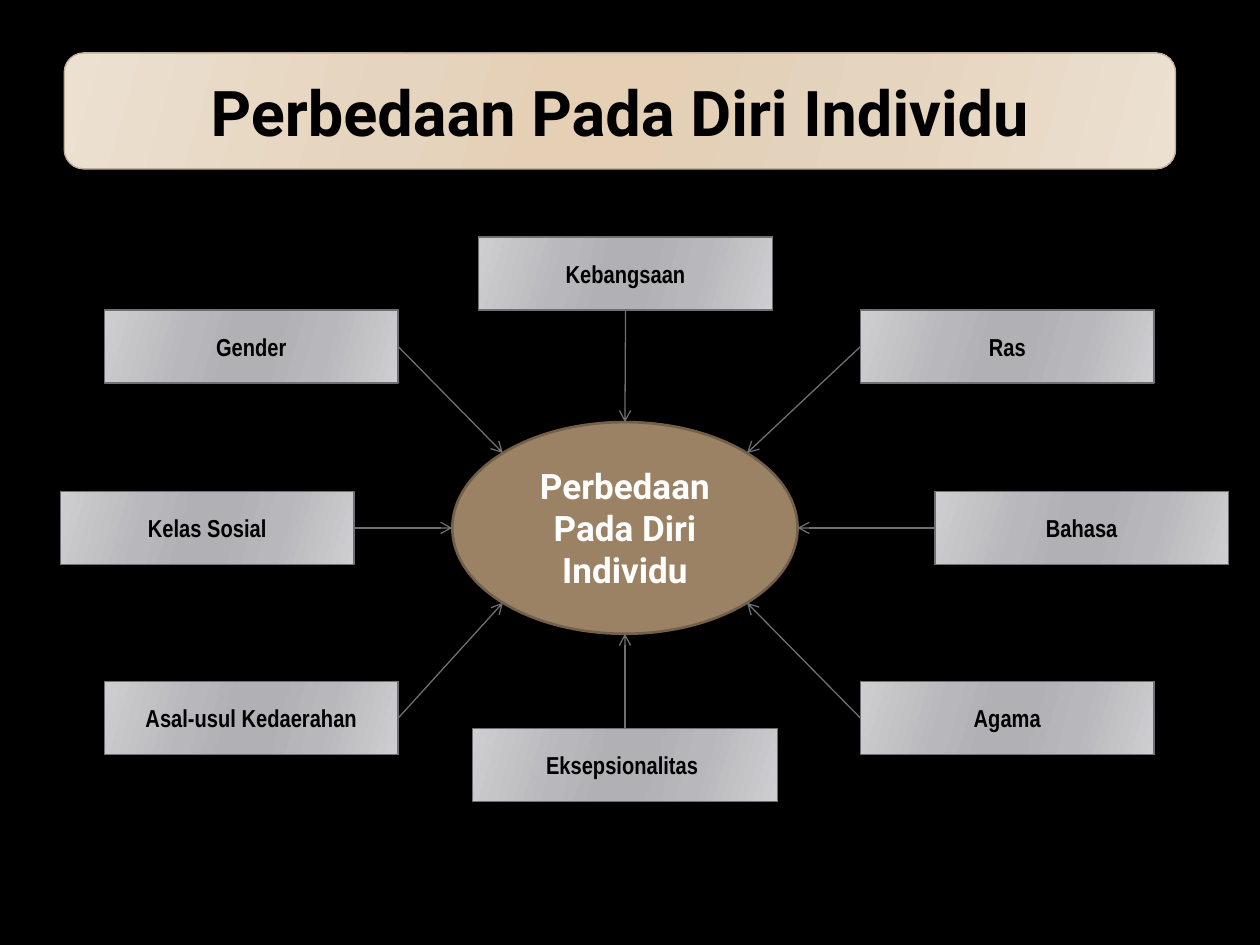
from math import cos, radians, sin

from lxml.etree import SubElement
from pptx import Presentation
from pptx.dml.color import RGBColor
from pptx.enum.shapes import MSO_CONNECTOR, MSO_SHAPE
from pptx.enum.text import MSO_ANCHOR, PP_ALIGN
from pptx.oxml.ns import qn
from pptx.util import Inches, Pt

BLACK = RGBColor(0x00, 0x00, 0x00)
WHITE = RGBColor(0xFF, 0xFF, 0xFF)
BROWN = RGBColor(0x9C, 0x82, 0x65)
DARK_BROWN = RGBColor(0x73, 0x60, 0x4B)
TAN = RGBColor(0xBE, 0xAE, 0x98)
GRAY = RGBColor(0x6F, 0x6F, 0x74)

# Gradient colours at each stop percentage
STOPS = (0, 30, 45, 55, 73, 100)
SILVER_GRADIENT = [RGBColor.from_string(c) for c in (
    "CECED0", "B8B8BC", "B1B1B5", "B1B1B5", "B8B8BC", "CECED0")]
SAND_GRADIENT = [RGBColor.from_string(c) for c in (
    "ECE0D1", "E5D4BE", "E5D0B5", "E3D0B7", "E5D4BE", "ECE0D1")]

TITLE_FONT = {"name": "Roboto", "size": Pt(36), "bold": True}
CENTER_FONT = {"name": "Roboto", "size": Pt(20), "bold": True}
FACTOR_FONT = {"name": "Arial Narrow", "size": Pt(14), "bold": True}

TOPIC = "Perbedaan Pada Diri Individu"
CENTER_X, CENTER_Y = 4.96, 4.19
RADIUS_X, RADIUS_Y = 1.37, 0.84
BOX_WIDTH, BOX_HEIGHT = 2.33, 0.58

# Label, left, top, width, arrow side (x, y), angle where the arrow meets the ellipse
FACTORS = [
    ("Ras", 6.83, 2.46, BOX_WIDTH, (0, 0.5), -45),
    ("Kebangsaan", 3.8, 1.88, BOX_WIDTH, (0.5, 1), -90),
    ("Bahasa", 7.42, 3.9, BOX_WIDTH, (0, 0.5), 0),
    ("Eksepsionalitas ", 3.75, 5.78, 2.42, (0.5, 0), 90),
    ("Gender", 0.83, 2.46, BOX_WIDTH, (1, 0.5), -135),
    ("Kelas Sosial", 0.48, 3.9, BOX_WIDTH, (1, 0.5), 180),
    ("Agama", 6.83, 5.41, BOX_WIDTH, (0, 0.5), 45),
    ("Asal-usul Kedaerahan", 0.83, 5.41, BOX_WIDTH, (1, 0.5), 135),
]


def add_label_shape(slide, kind, bounds, text, font_format, text_color, line_color, line_width):
    shape = slide.shapes.add_shape(kind, *map(Inches, bounds))
    shape.shadow.inherit = False
    shape.line.color.rgb = line_color
    shape.line.width = Pt(line_width)
    frame = shape.text_frame
    frame.word_wrap = True
    frame.vertical_anchor = MSO_ANCHOR.MIDDLE
    paragraph = frame.paragraphs[0]
    paragraph.alignment = PP_ALIGN.CENTER
    run = paragraph.add_run()
    run.text = text
    for attribute, value in font_format.items():
        setattr(run.font, attribute, value)
    run.font.color.rgb = text_color
    return shape


def fill_gradient(shape, colors):
    shape.fill.gradient()
    shape.fill.gradient_angle = 344
    stop_list = shape.element.spPr.find(".//" + qn("a:gsLst"))
    for stop in list(stop_list):
        stop_list.remove(stop)
    for position, color in zip(STOPS, colors):
        stop = SubElement(stop_list, qn("a:gs"), pos=str(position * 1000))
        SubElement(stop, qn("a:srgbClr"), val=str(color))


def add_shadow(shape):
    effects = shape.element.spPr.find(qn("a:effectLst"))
    shadow = SubElement(effects, qn("a:outerShdw"), blurRad=str(Pt(3)), dist=str(Pt(2)),
                        dir="5400000", rotWithShape="0")
    color = SubElement(shadow, qn("a:srgbClr"), val=str(BLACK))
    SubElement(color, qn("a:alpha"), val="40000")


def add_panel(slide, kind, bounds, text, font_format, gradient, line_color):
    panel = add_label_shape(slide, kind, bounds, text, font_format, BLACK, line_color, 0.75)
    fill_gradient(panel, gradient)
    add_shadow(panel)


def add_arrow(slide, start, end):
    arrow = slide.shapes.add_connector(MSO_CONNECTOR.STRAIGHT, *map(Inches, start + end))
    arrow.line.color.rgb = GRAY
    arrow.line.width = Pt(0.75)
    SubElement(arrow.line._get_or_add_ln(), qn("a:tailEnd"), type="arrow")
    SubElement(arrow._element.spPr, qn("a:effectLst"))


def main():
    presentation = Presentation()
    presentation.slide_width, presentation.slide_height = Inches(10), Inches(7.5)
    slide = presentation.slides.add_slide(presentation.slide_layouts[6])
    slide.background.fill.solid()
    slide.background.fill.fore_color.rgb = BLACK

    # Central topic
    center_bounds = (CENTER_X - RADIUS_X, CENTER_Y - RADIUS_Y, 2 * RADIUS_X, 2 * RADIUS_Y)
    center = add_label_shape(slide, MSO_SHAPE.OVAL, center_bounds, TOPIC,
                             CENTER_FONT, WHITE, DARK_BROWN, 1.5)
    center.fill.solid()
    center.fill.fore_color.rgb = BROWN

    # Surrounding factors
    for label, left, top, width, _, _ in FACTORS:
        add_panel(slide, MSO_SHAPE.RECTANGLE, (left, top, width, BOX_HEIGHT), label,
                  FACTOR_FONT, SILVER_GRADIENT, GRAY)

    # Title
    add_panel(slide, MSO_SHAPE.ROUNDED_RECTANGLE, (0.51, 0.42, 8.82, 0.92), TOPIC,
              TITLE_FONT, SAND_GRADIENT, TAN)

    # Arrows from each factor to the central topic
    for _, left, top, width, (side_x, side_y), angle in FACTORS:
        start = (left + side_x * width, top + side_y * BOX_HEIGHT)
        end = (CENTER_X + RADIUS_X * cos(radians(angle)),
               CENTER_Y + RADIUS_Y * sin(radians(angle)))
        add_arrow(slide, start, end)

    presentation.save("out.pptx")


if __name__ == "__main__":
    main()
